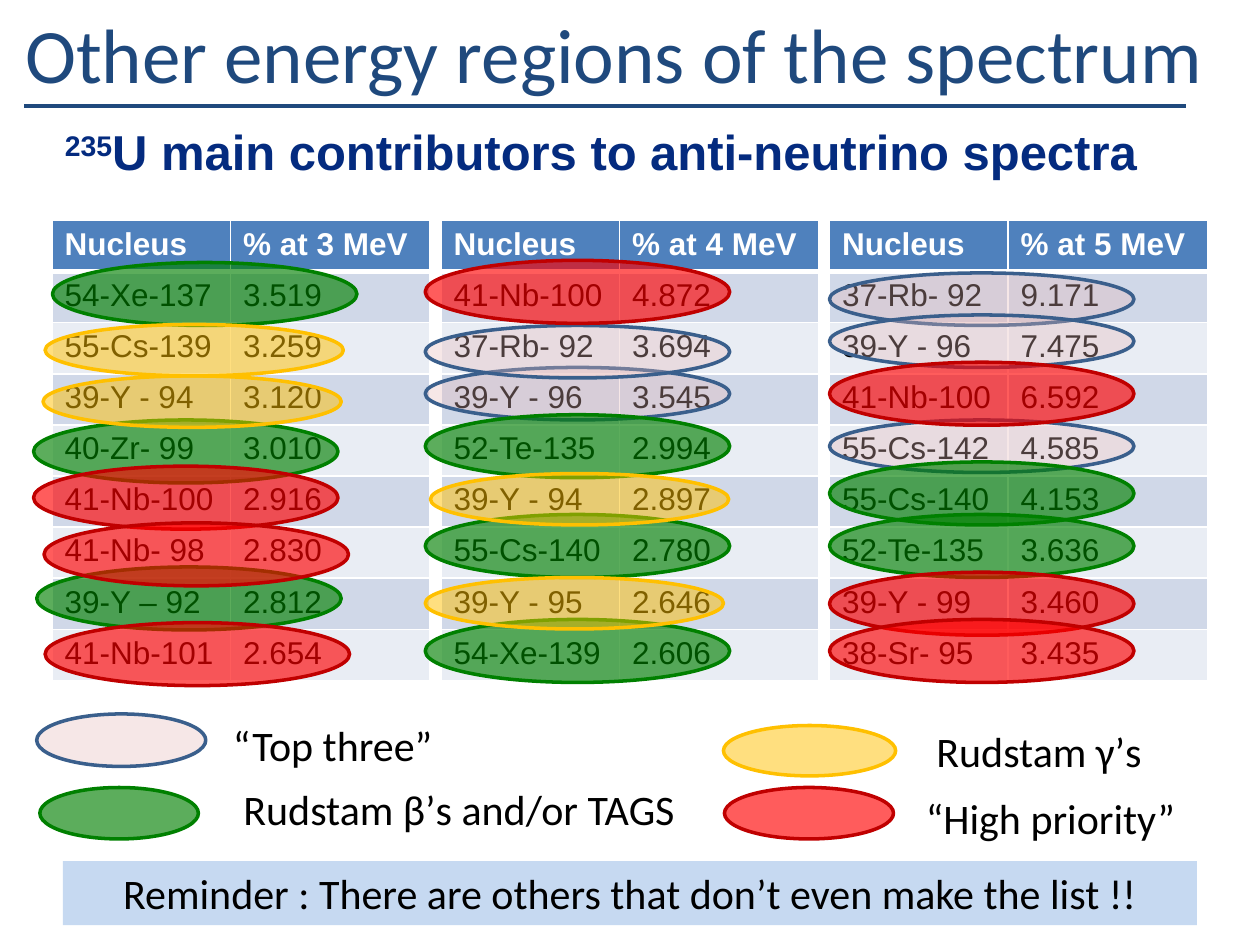
from pptx import Presentation
from pptx.dml.color import RGBColor as Rgb
from pptx.enum.shapes import MSO_CONNECTOR as Connector, MSO_SHAPE as Preset
from pptx.enum.text import MSO_ANCHOR as Anchor, MSO_AUTO_SIZE as AutoSize, PP_ALIGN as Align
from pptx.oxml.ns import qn
from pptx.util import Inches, Pt
from lxml.etree import SubElement

COLORS = {
    "title": "1F497D", "subtitle": "042B7F", "ink": "000000", "white": "FFFFFF",
    "header": "4F81BD", "band_dark": "D0D8E8", "band_light": "E9EDF4", "banner": "C6D9F1",
    "pink": "E6B9B8", "navy": "3A5F8C", "green": "008000", "amber": "FFC000",
    "red": "FF0000", "crimson": "C00000",
}
FORMATS = {
    "title": ({"name": "Calibri", "size": Pt(44)}, "title"),
    "subtitle": ({"name": "Arial", "size": Pt(28), "bold": True}, "subtitle"),
    "label": ({"name": "Calibri", "size": Pt(24)}, "ink"),
    "header": ({"name": "Arial", "size": Pt(18), "bold": True}, "white"),
    "cell": ({"name": "Arial", "size": Pt(18), "bold": False}, "ink"),
}
COLUMNS, ROWS = 120, 90
TABLE_TOP, ROW_HEIGHT = 21, 4.87
COLUMN_WIDTHS = (17, 19)
LEFT, MIDDLE, RIGHT = 3.2, 40.5, 79

CONTRIBUTORS = [
    (4.95, "% at 3 MeV", [
        ("54-Xe-137", "3.519"), ("55-Cs-139", "3.259"), ("39-Y - 94", "3.120"),
        ("40-Zr- 99", "3.010"), ("41-Nb-100", "2.916"), ("41-Nb- 98", "2.830"),
        ("39-Y – 92", "2.812"), ("41-Nb-101", "2.654")]),
    (42, "% at 4 MeV", [
        ("41-Nb-100", "4.872"), ("37-Rb- 92", "3.694"), ("39-Y - 96", "3.545"),
        ("52-Te-135", "2.994"), ("39-Y - 94", "2.897"), ("55-Cs-140", "2.780"),
        ("39-Y - 95", "2.646"), ("54-Xe-139", "2.606")]),
    (79, "% at 5 MeV", [
        ("37-Rb- 92", "9.171"), ("39-Y - 96", "7.475"), ("41-Nb-100", "6.592"),
        ("55-Cs-142", "4.585"), ("55-Cs-140", "4.153"), ("52-Te-135", "3.636"),
        ("39-Y - 99", "3.460"), ("38-Sr- 95", "3.435")]),
]

CATEGORIES = [
    {"label": "“Top three”", "label_box": (21, 67.9, 28, 6.1), "key": (3.5, 68, 16.1, 5),
     "look": ("pink", 33, "navy"), "size": (29, 5),
     "marks": [(RIGHT, 40), (RIGHT, 26), (RIGHT, 30), (MIDDLE, 35), (MIDDLE, 31)]},
    {"label": "Rudstam β’s and/or TAGS", "label_box": (22, 74, 59.5, 6.1),
     "key": (3.8, 75, 15.1, 4.9), "look": ("green", 64, "green"), "size": (29, 6),
     "marks": [(RIGHT, 44), (RIGHT, 49), (MIDDLE, 59), (MIDDLE, 49), (LEFT, 40),
               (5, 25), (3.5, 54), (MIDDLE, 39.5)]},
    {"label": "Rudstam γ’s", "label_box": (88, 68.5, 25, 6.1), "key": (68.9, 69.1, 16.4, 4.8),
     "look": ("amber", 50, "amber"), "size": (28.4, 4.9),
     "marks": [(4.1, 35.8), (41, 45.1), (MIDDLE, 55), (4.3, 30.9)]},
    {"label": "“High priority”", "label_box": (87, 74.9, 28, 6.1), "key": (69, 75, 16.1, 4.9),
     "look": ("red", 64, "crimson"), "size": (29, 6),
     "marks": [(MIDDLE, 24.8), (RIGHT, 34.5), (LEFT, 44.4), (4.2, 49.8), (4.3, 59.3),
               (RIGHT, 54.5), (RIGHT, 59)]},
]


class Deck:
    def __init__(self):
        self.show = Presentation()
        self.show.slide_width, self.show.slide_height = Inches(10), Inches(7.5)
        self.slide = self.show.slides.add_slide(self.show.slide_layouts[6])

    def x(self, columns):
        return round(self.show.slide_width * columns / COLUMNS)

    def y(self, rows):
        return round(self.show.slide_height * rows / ROWS)

    def box(self, left, top, width, height):
        return self.x(left), self.y(top), self.x(width), self.y(height)

    def color(self, name):
        return Rgb.from_string(COLORS[name])

    def paint(self, fill, name):
        fill.solid()
        fill.fore_color.rgb = self.color(name)

    def typeset(self, frame, runs, style, align=Align.LEFT):
        attributes, ink = FORMATS[style]
        paragraph = frame.paragraphs[0]
        paragraph.alignment = align
        for words, baseline in runs:
            run = paragraph.add_run()
            run.text = words
            for attribute, value in attributes.items():
                setattr(run.font, attribute, value)
            run.font.color.rgb = self.color(ink)
            if baseline:
                run._r.get_or_add_rPr().set("baseline", str(baseline * 1000))

    def text(self, place, runs, style, align=Align.LEFT, group=None, fill=None):
        area = (group or self.slide).shapes.add_textbox(*self.box(*place))
        area.text_frame.word_wrap = True
        area.text_frame.auto_size = AutoSize.SHAPE_TO_FIT_TEXT
        if fill:
            self.paint(area.fill, fill)
        self.typeset(area.text_frame, runs, style, align)

    def rule(self, start, end, row, name):
        line = self.slide.shapes.add_connector(
            Connector.STRAIGHT, self.x(start), self.y(row), self.x(end), self.y(row))
        line.line.color.rgb = self.color(name)
        line.line.width = Pt(2.25)
        SubElement(line._element.spPr, qn("a:effectLst"))

    def ellipse(self, group, place, look):
        fill, opacity, outline = look
        mark = group.shapes.add_shape(Preset.OVAL, *self.box(*place))
        mark.shadow.inherit = False
        self.paint(mark.fill, fill)
        tint = mark._element.spPr.find(qn("a:solidFill"))[0]
        SubElement(tint, qn("a:alpha"), val=str(opacity * 1000))
        mark.line.color.rgb = self.color(outline)
        mark.line.width = Pt(2)

    def category(self, label, label_box, key, look, size, marks):
        group = self.slide.shapes.add_group_shape()
        for place in [mark + size for mark in marks] + [key]:
            self.ellipse(group, place, look)
        self.text(label_box, [(label, 0)], "label", group=group)

    def borders(self, cell, widths):
        properties = cell._tc.get_or_add_tcPr()
        for side, width in zip(("lnL", "lnR", "lnT", "lnB"), widths):
            edge = SubElement(properties, qn(f"a:{side}"), w=str(Pt(width)))
            SubElement(SubElement(edge, qn("a:solidFill")), qn("a:srgbClr"), val=COLORS["white"])

    def table(self, left, records):
        place = self.box(left, TABLE_TOP, sum(COLUMN_WIDTHS), ROW_HEIGHT * len(records))
        grid = self.slide.shapes.add_table(len(records), len(COLUMN_WIDTHS), *place).table
        for column, width in zip(grid.columns, COLUMN_WIDTHS):
            column.width = self.x(width)
        for index, record in enumerate(records):
            grid.rows[index].height = self.y(ROW_HEIGHT)
            band = "header" if index == 0 else ("band_light", "band_dark")[index % 2]
            edges = (1, 1, 3 if index == 1 else 1, 3 if index == 0 else 1)
            for position, words in enumerate(record):
                cell = grid.cell(index, position)
                cell.vertical_anchor = Anchor.TOP
                self.borders(cell, edges)
                self.paint(cell.fill, band)
                self.typeset(cell.text_frame, [(words, 0)], "cell" if index else "header")


def main():
    deck = Deck()
    for left, share, records in CONTRIBUTORS:
        deck.table(left, [("Nucleus", share)] + records)
    deck.text((5, 11, 110, 6.9),
              [("235", 30), ("U main contributors to anti-neutrino spectra", 0)], "subtitle")
    deck.text((0, 0, 117, 10.1), [("Other energy regions of the spectrum", 0)],
              "title", Align.CENTER)
    deck.rule(2.3, 113, 10.1, "title")
    for category in CATEGORIES:
        deck.category(**category)
    deck.text((6, 82, 108, 6.1),
              [("Reminder : There are others that don’t even make the list !!", 0)],
              "label", Align.CENTER, fill="banner")
    deck.show.save("out.pptx")


if __name__ == "__main__":
    main()
